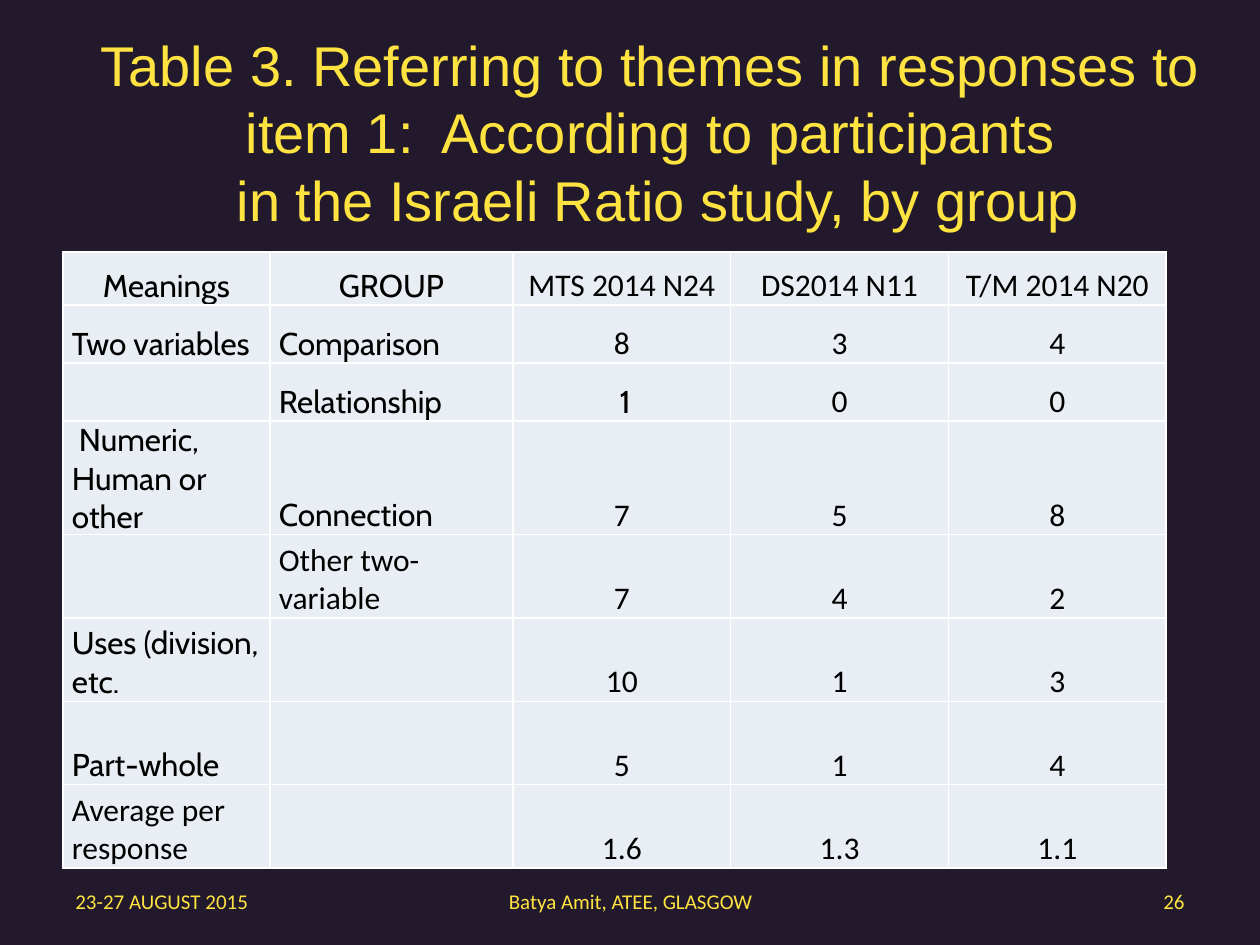
from lxml import etree
from pptx import Presentation
from pptx.dml.color import RGBColor
from pptx.enum import text
from pptx.oxml import ns
from pptx.util import Cm, Pt

NIGHT = RGBColor(0x22, 0x1A, 0x2C)
YELLOW = RGBColor(0xFF, 0xE3, 0x41)
PALE = RGBColor(0xE9, 0xED, 0xF4)
WHITE = RGBColor(0xFF, 0xFF, 0xFF)
BLACK = RGBColor(0, 0, 0)

LEFT, MID, RIGHT = text.PP_ALIGN.LEFT, text.PP_ALIGN.CENTER, text.PP_ALIGN.RIGHT

TITLE = ("Table 3. Referring to themes in responses to item 1:  "
         "According to participants\n in the Israeli Ratio study, by group")
FOOTER = [
    (1.27, 5.92, "23-27 AUGUST 2015", LEFT),
    (8.69, 8.05, "Batya Amit, ATEE, GLASGOW", MID),
    (18.21, 5.92, "26", RIGHT),
]
COLS = [4.17, 4.9, 4.39, 4.39, 4.39]
HEIGHTS = [1.07, 1.17, 1.17, 1.52] + [1.68] * 4
ROWS = [
    ("Meanings", "GROUP", "MTS 2014 N24", "DS2014 N11", "T/M 2014 N20"),
    ("Two variables", "Comparison", "8", "3", "4"),
    ("", "Relationship", " 1", "0", "0"),
    (" Numeric, Human or other", "Connection", "7", "5", "8"),
    ("", "Other two-variable", "7", "4", "2"),
    ("Uses (division, etc.", "", "10", "1", "3"),
    ("Part-whole", "", "5", "1", "4"),
    ("Average per response", "", "1.6", "1.3", "1.1"),
]
# Cells whose font differs from the rest of their column
CALIBRI_LABELS = {"Other two-variable", "Average per response"}
CABIN_VALUES = {" 1"}


def write(para, words, size, face, color, align):
    para.text = words
    para.alignment = align
    font = para.font
    font.size, font.name = Pt(size), face
    font.color.rgb = color


def label(slide, box, words, size, face, align):
    frame = slide.shapes.add_textbox(*map(Cm, box)).text_frame
    frame.word_wrap = True
    frame.vertical_anchor = text.MSO_ANCHOR.MIDDLE
    write(frame.paragraphs[0], words, size, face, YELLOW, align)


def border(cell):
    """Draw a thin white line on all four sides of the cell."""
    props = cell._tc.get_or_add_tcPr()
    for side in ("a:lnL", "a:lnR", "a:lnT", "a:lnB"):
        line = etree.SubElement(props, ns.qn(side), w=str(Pt(1)))
        fill = etree.SubElement(line, ns.qn("a:solidFill"))
        etree.SubElement(fill, ns.qn("a:srgbClr"), val=str(WHITE))


def style(cell, words, head, named):
    border(cell)
    cell.fill.solid()
    cell.fill.fore_color.rgb = PALE
    cell.vertical_anchor = text.MSO_ANCHOR.BOTTOM
    cell.margin_left = cell.margin_right = Cm(0.18)
    cell.margin_top = cell.margin_bottom = 0
    cabin = words not in CALIBRI_LABELS if named else words in CABIN_VALUES
    write(cell.text_frame.paragraphs[0], words, 18,
          "Cabin" if cabin else "Calibri", BLACK,
          LEFT if named and not head else MID)


def grid(slide):
    table = slide.shapes.add_table(len(ROWS), len(COLS), Cm(1.27), Cm(5.08),
                                   Cm(sum(COLS)), Cm(sum(HEIGHTS))).table
    table.first_row = table.horz_banding = False
    for col, width in zip(table.columns, COLS):
        col.width = Cm(width)
    for r, (row, height) in enumerate(zip(ROWS, HEIGHTS)):
        table.rows[r].height = Cm(height)
        for c, words in enumerate(row):
            style(table.cell(r, c), words, head=r == 0, named=c < 2)


def main():
    deck = Presentation()
    deck.slide_width, deck.slide_height = Cm(25.4), Cm(19.05)
    slide = deck.slides.add_slide(deck.slide_layouts[6])
    back = slide.background.fill
    back.solid()
    back.fore_color.rgb = NIGHT
    label(slide, (1.27, 0.5, 23.7, 4.3), TITLE, 32, "Arial", MID)
    for left, width, words, align in FOOTER:
        label(slide, (left, 17.65, width, 1.02), words, 12, "Calibri", align)
    grid(slide)
    deck.save("out.pptx")


if __name__ == "__main__":
    main()
